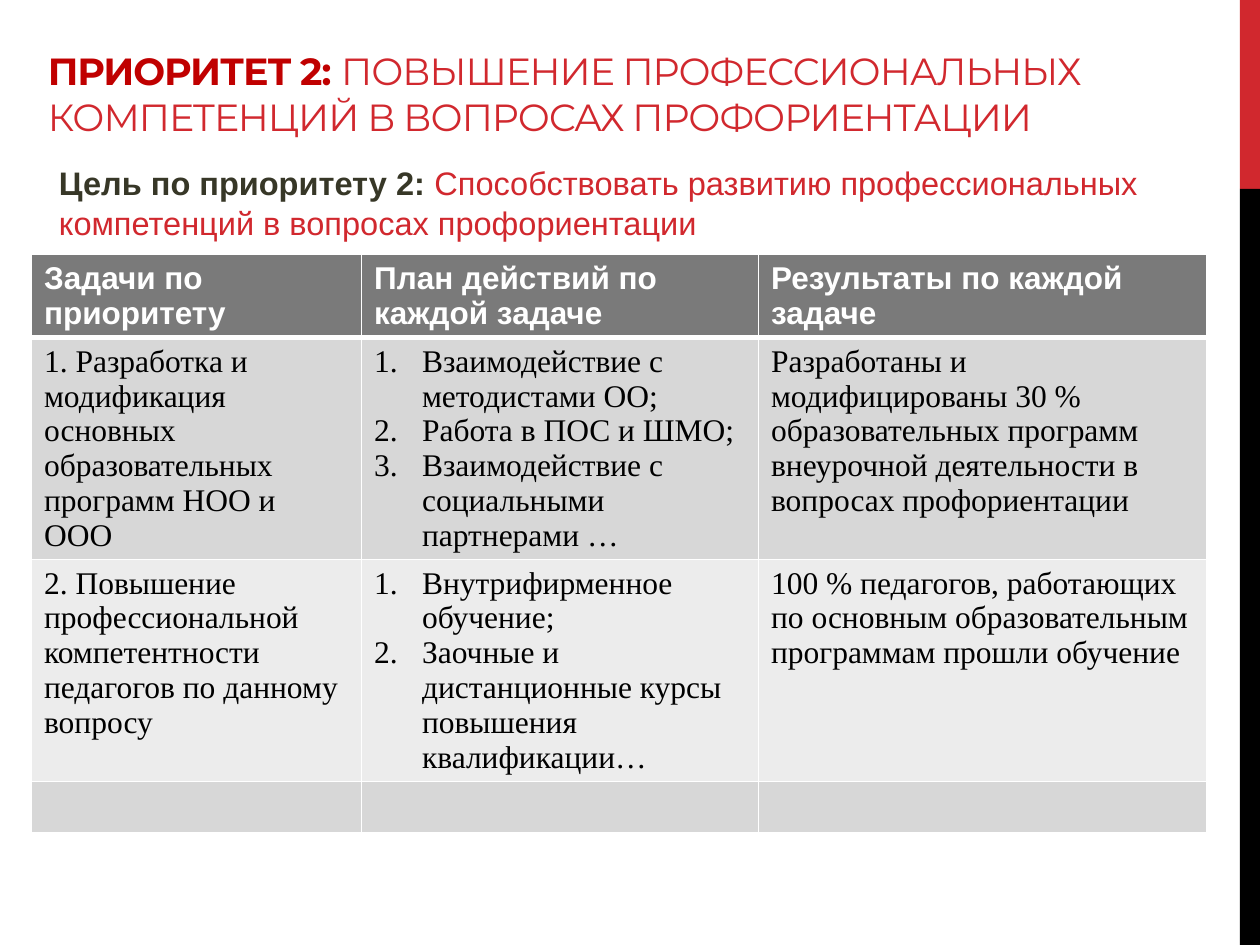
from dataclasses import dataclass

import pptx
import pptx.dml.color
import pptx.enum.shapes
import pptx.enum.text
import pptx.oxml.ns
import pptx.util
from lxml import etree

Inches = pptx.util.Inches
Pt = pptx.util.Pt
qn = pptx.oxml.ns.qn

COLORS = {
    "red": "D1282E",
    "dark_red": "C00000",
    "olive": "373727",
    "black": "000000",
    "white": "FFFFFF",
    "header": "7A7A7A",
    "band_dark": "D7D7D7",
    "band_light": "ECECEC",
}


@dataclass
class Bar:
    top: float
    height: float
    color: str


@dataclass
class Style:
    font: str
    size: float
    color: str
    bold: bool = False


@dataclass
class Row:
    height: float
    fill: str
    style: Style
    cells: list[list[str]]


HEADER_STYLE = Style("Arial", 18, "white", True)
BODY_STYLE = Style("Times New Roman", 18, "black")
BARS = [Bar(0, 1.5, "red"), Bar(1.5, 6, "black")]
COLUMN_WIDTHS = [2.62, 3.15, 3.56]
PLAN_COLUMN = 1
ROWS = [
    Row(0.41, "header", HEADER_STYLE, [
        ["Задачи по приоритету"],
        ["План действий по каждой задаче"],
        ["Результаты по каждой задаче"],
    ]),
    Row(0.41, "band_dark", BODY_STYLE, [
        ["1. Разработка и модификация основных образовательных программ НОО и ООО"],
        [
            "Взаимодействие с методистами ОО;",
            "Работа в ПОС и ШМО;",
            "Взаимодействие с социальными партнерами …",
        ],
        ["Разработаны и модифицированы 30 % образовательных программ "
         "внеурочной деятельности в вопросах профориентации"],
    ]),
    Row(0.41, "band_light", BODY_STYLE, [
        ["2. Повышение профессиональной компетентности педагогов по данному вопросу"],
        [
            "Внутрифирменное обучение;",
            "Заочные и дистанционные курсы повышения квалификации…",
        ],
        ["100 % педагогов, работающих по основным образовательным "
         "программам прошли обучение"],
    ]),
    Row(0.41, "band_dark", BODY_STYLE, [[], [], []]),
]


def rgb(name: str) -> pptx.dml.color.RGBColor:
    return pptx.dml.color.RGBColor.from_string(COLORS[name])


def format_font(font, style: Style) -> None:
    font.name = style.font
    font.size = Pt(style.size)
    font.bold = style.bold
    font.color.rgb = rgb(style.color)


def add_run(paragraph, text: str, style: Style):
    run = paragraph.add_run()
    run.text = text
    format_font(run.font, style)
    return run


def draw_bar(slide, bar: Bar) -> None:
    shape = slide.shapes.add_shape(
        pptx.enum.shapes.MSO_SHAPE.RECTANGLE,
        Inches(9.84), Inches(bar.top), Inches(0.16), Inches(bar.height))
    shape.shadow.inherit = False
    shape.fill.solid()
    shape.fill.fore_color.rgb = rgb(bar.color)
    shape.line.fill.background()


def write_title(slide) -> None:
    title = slide.shapes.title
    title.left, title.top = Inches(0.28), Inches(0.29)
    title.width, title.height = Inches(9.03), Inches(0.86)
    frame = title.text_frame
    frame.word_wrap = True
    frame.auto_size = pptx.enum.text.MSO_AUTO_SIZE.NONE
    frame.vertical_anchor = pptx.enum.text.MSO_ANCHOR.BOTTOM
    heading = frame.paragraphs[0]
    heading.alignment = pptx.enum.text.PP_ALIGN.LEFT
    for text, color, bold in [
        ("ПРИОРИТЕТ 2: ", "dark_red", True),
        ("ПОВЫШЕНИЕ ПРОФЕССИОНАЛЬНЫХ КОМПЕТЕНЦИЙ В ВОПРОСАХ ПРОФОРИЕНТАЦИИ", "red", False),
    ]:
        run = add_run(heading, text, Style("Montserrat", 21.6, color, bold))
        run.font._element.set("spc", "-60")


def write_goal(slide) -> None:
    box = slide.shapes.add_textbox(Inches(0.25), Inches(1.23), Inches(9), Inches(0.63))
    box.text_frame.word_wrap = True
    goal = box.text_frame.paragraphs[0]
    goal.line_spacing = 1.04
    goal._p.get_or_add_pPr().set("marL", str(Inches(0.12)))
    add_run(goal, "Цель по приоритету 2: ", Style("Arial", 18.6, "olive", True))
    add_run(goal, "Способствовать развитию профессиональных компетенций "
                  "в вопросах профориентации", Style("Arial", 18.6, "red"))


def number_paragraph(paragraph) -> None:
    properties = paragraph._p.get_or_add_pPr()
    properties.set("marL", str(Inches(0.38)))
    properties.set("indent", str(-Inches(0.38)))
    etree.SubElement(properties, qn("a:buFont"), typeface="+mj-lt")
    etree.SubElement(properties, qn("a:buAutoNum"), type="arabicPeriod")


def set_borders(cell, widths: dict[str, float]) -> None:
    properties = cell._tc.get_or_add_tcPr()
    for position, (side, width) in enumerate(widths.items()):
        border = etree.Element(qn(f"a:{side}"), w=str(Pt(width)))
        fill = etree.SubElement(border, qn("a:solidFill"))
        etree.SubElement(fill, qn("a:srgbClr"), val=COLORS["white"])
        properties.insert(position, border)


def fill_cell(cell, row: Row, paragraphs: list[str], numbered: bool) -> None:
    cell.fill.solid()
    cell.fill.fore_color.rgb = rgb(row.fill)
    frame = cell.text_frame
    frame.text = "\n".join(paragraphs)
    for paragraph in frame.paragraphs:
        format_font(paragraph.font, row.style)
        for run in paragraph.runs:
            format_font(run.font, row.style)
        if numbered:
            number_paragraph(paragraph)


def draw_table(slide) -> None:
    table = slide.shapes.add_table(
        len(ROWS), len(COLUMN_WIDTHS), Inches(0.25), Inches(2.02),
        Inches(sum(COLUMN_WIDTHS)), Inches(sum(row.height for row in ROWS))).table
    for column, width in zip(table.columns, COLUMN_WIDTHS):
        column.width = Inches(width)
    for r, row in enumerate(ROWS):
        table.rows[r].height = Inches(row.height)
        for c, paragraphs in enumerate(row.cells):
            cell = table.cell(r, c)
            numbered = c == PLAN_COLUMN and len(paragraphs) > 1
            fill_cell(cell, row, paragraphs, numbered)
            set_borders(cell, {"lnL": 1, "lnR": 1,
                               "lnT": 3 if r == 1 else 1,
                               "lnB": 3 if r == 0 else 1})


def main() -> None:
    presentation = pptx.Presentation()
    presentation.slide_width, presentation.slide_height = Inches(10), Inches(7.5)
    slide = presentation.slides.add_slide(presentation.slide_layouts[5])
    for bar in BARS:
        draw_bar(slide, bar)
    write_title(slide)
    draw_table(slide)
    write_goal(slide)
    presentation.save("out.pptx")


if __name__ == "__main__":
    main()
